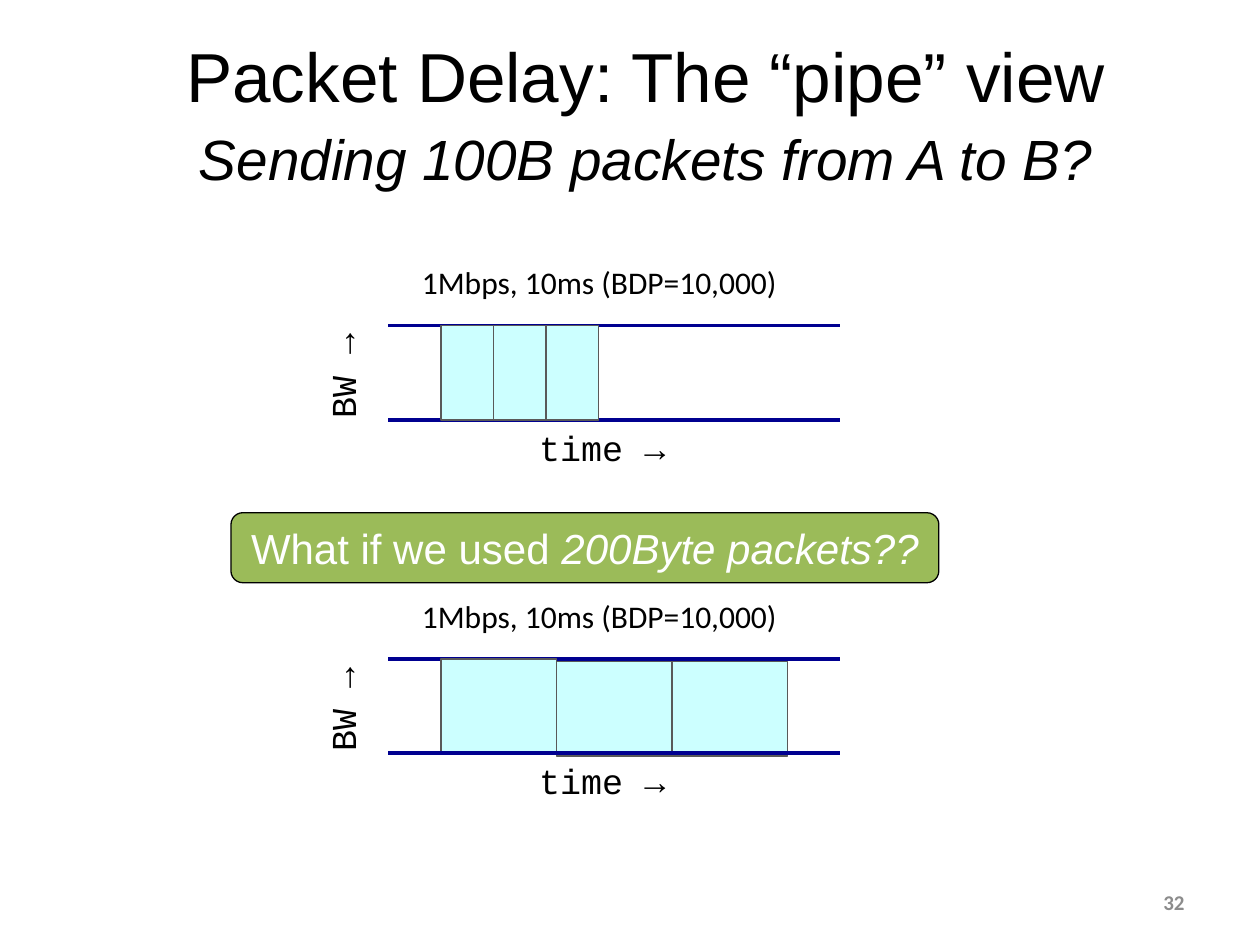
from dataclasses import dataclass

from pptx import Presentation
from pptx.dml.color import RGBColor
from pptx.enum import shapes, text
from pptx.oxml import ns, xmlchemy
from pptx.util import Pt


@dataclass(frozen=True)
class Theme:
    ink: str = "000000"
    inverse: str = "FFFFFF"
    muted: str = "8C8C8C"
    pipe: str = "000090"
    packet: str = "CCFFFF"
    packet_edge: str = "595959"
    banner: str = "9BBB59"
    head: str = "Arial"
    body: str = "Calibri"
    mono: str = "Courier New"
    title: float = 39.6
    subtitle: float = 32.4
    question: float = 24
    axis: float = 20
    caption: float = 18
    number: float = 12
    thin: float = 0.75
    thick: float = 2.25


T = Theme()
ALIGN = text.PP_ALIGN
ANCHOR = text.MSO_ANCHOR
RECT = shapes.MSO_SHAPE.RECTANGLE
ROUNDED = shapes.MSO_SHAPE.ROUNDED_RECTANGLE


def add_run(p, words, font, size, color=T.ink, bold=False, italic=False):
    r = p.add_run()
    r.text = words
    r.font.name = font
    r.font.size = Pt(size)
    r.font.bold = bold
    r.font.italic = italic
    r.font.color.rgb = RGBColor.from_string(color)


def add_label(s, box, words, font, size, color=T.ink, bold=False,
              align=ALIGN.LEFT, anchor=ANCHOR.TOP, spacing=1.0, rotation=0):
    sp = s.shapes.add_textbox(*map(Pt, box))
    sp.rotation = rotation
    tf = sp.text_frame
    tf.word_wrap = True
    tf.vertical_anchor = anchor
    p = tf.paragraphs[0]
    p.alignment = align
    p.line_spacing = spacing
    add_run(p, words, font, size, color, bold)


def add_block(s, kind, box, fill, edge):
    sp = s.shapes.add_shape(kind, *map(Pt, box))
    sp.shadow.inherit = False
    sp.fill.solid()
    sp.fill.fore_color.rgb = RGBColor.from_string(fill)
    sp.line.color.rgb = RGBColor.from_string(edge)
    sp.line.width = Pt(T.thin)
    return sp


def add_wall(s, left, top, width):
    line = s.shapes.add_connector(
        shapes.MSO_CONNECTOR.STRAIGHT, Pt(left), Pt(top), Pt(left + width), Pt(top))
    line.line.color.rgb = RGBColor.from_string(T.pipe)
    line.line.width = Pt(T.thick)
    line._element.spPr.append(xmlchemy.OxmlElement("a:effectLst"))


def add_title(s, box):
    sp = s.shapes.title
    sp.left, sp.top, sp.width, sp.height = map(Pt, box)
    tf = sp.text_frame
    tf.auto_size = text.MSO_AUTO_SIZE.NONE
    tf.word_wrap = True
    tf.vertical_anchor = ANCHOR.MIDDLE
    p = tf.paragraphs[0]
    p.alignment = ALIGN.CENTER
    p.line_spacing = 1.1
    add_run(p, "Packet Delay: The “pipe” view", T.head, T.title)
    p.add_line_break()
    add_run(p, "Sending 100B packets from A to B?", T.head, T.subtitle, italic=True)


def add_pipe(s, box, packet_width, drops, wall_in_front=False):
    left, top, width, height = box
    bottom = top + height
    add_label(s, (left + 12, top - 43.5, 250.5, 32.5), "1Mbps, 10ms (BDP=10,000)",
              T.body, T.caption, spacing=1.2)
    add_wall(s, left, top, width)
    if not wall_in_front:
        add_wall(s, left, bottom, width)
    add_label(s, (left + 79, bottom, 95, 31.5), "time →", T.mono, T.axis)
    add_label(s, (left - 61.5, top + 9, 70.5, 31.5), "BW →", T.mono, T.axis, rotation=270)
    for i, drop in enumerate(drops):
        add_block(s, RECT, (left + 30 + i * packet_width, top + drop, packet_width, height),
                  T.packet, T.packet_edge)
    if wall_in_front:
        add_wall(s, left, bottom, width)


def add_question(s, box):
    sp = add_block(s, ROUNDED, box, T.banner, T.ink)
    sp.adjustments[0] = 0.17
    tf = sp.text_frame
    tf.word_wrap = False
    tf.vertical_anchor = ANCHOR.MIDDLE
    p = tf.paragraphs[0]
    p.alignment = ALIGN.CENTER
    add_run(p, "What if we used ", T.head, T.question, T.inverse)
    add_run(p, "200Byte packets??", T.head, T.question, T.inverse, italic=True)


def add_number(s, box):
    add_label(s, box, "32", T.body, T.number, T.muted, bold=True,
              align=ALIGN.RIGHT, anchor=ANCHOR.MIDDLE)


def main():
    prs = Presentation()
    prs.slide_width, prs.slide_height = Pt(720), Pt(540)
    s = prs.slides.add_slide(prs.slide_layouts[5])
    add_title(s, (36, 16, 666, 92))
    add_pipe(s, (222, 186, 258, 54), 30, (0, 0, 0))
    add_question(s, (132, 293, 404.5, 40))
    add_pipe(s, (222, 376.5, 258, 54), 66, (0, 1.5, 1.5), wall_in_front=True)
    add_number(s, (516, 501, 168, 29))
    prs.save("out.pptx")


if __name__ == "__main__":
    main()
